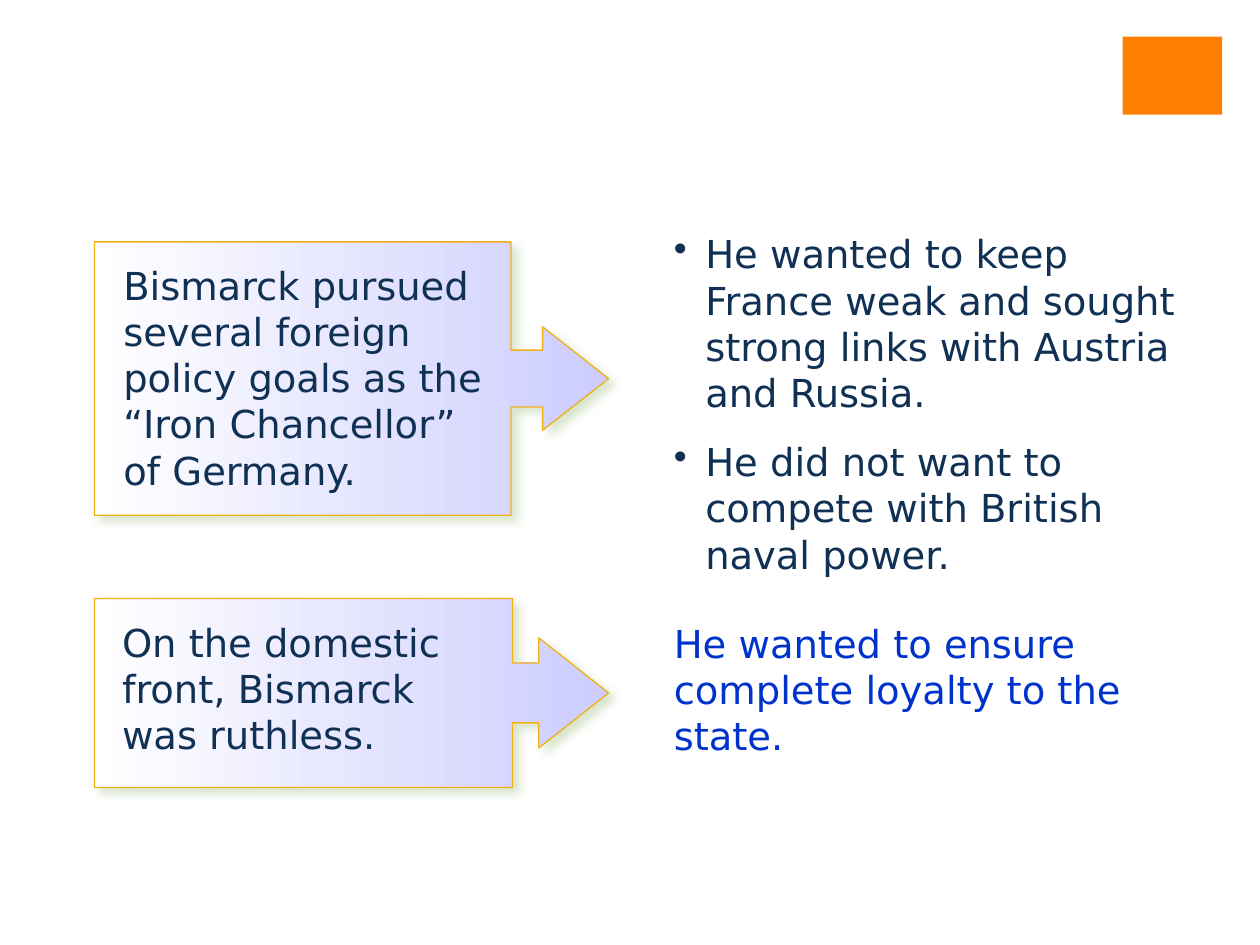
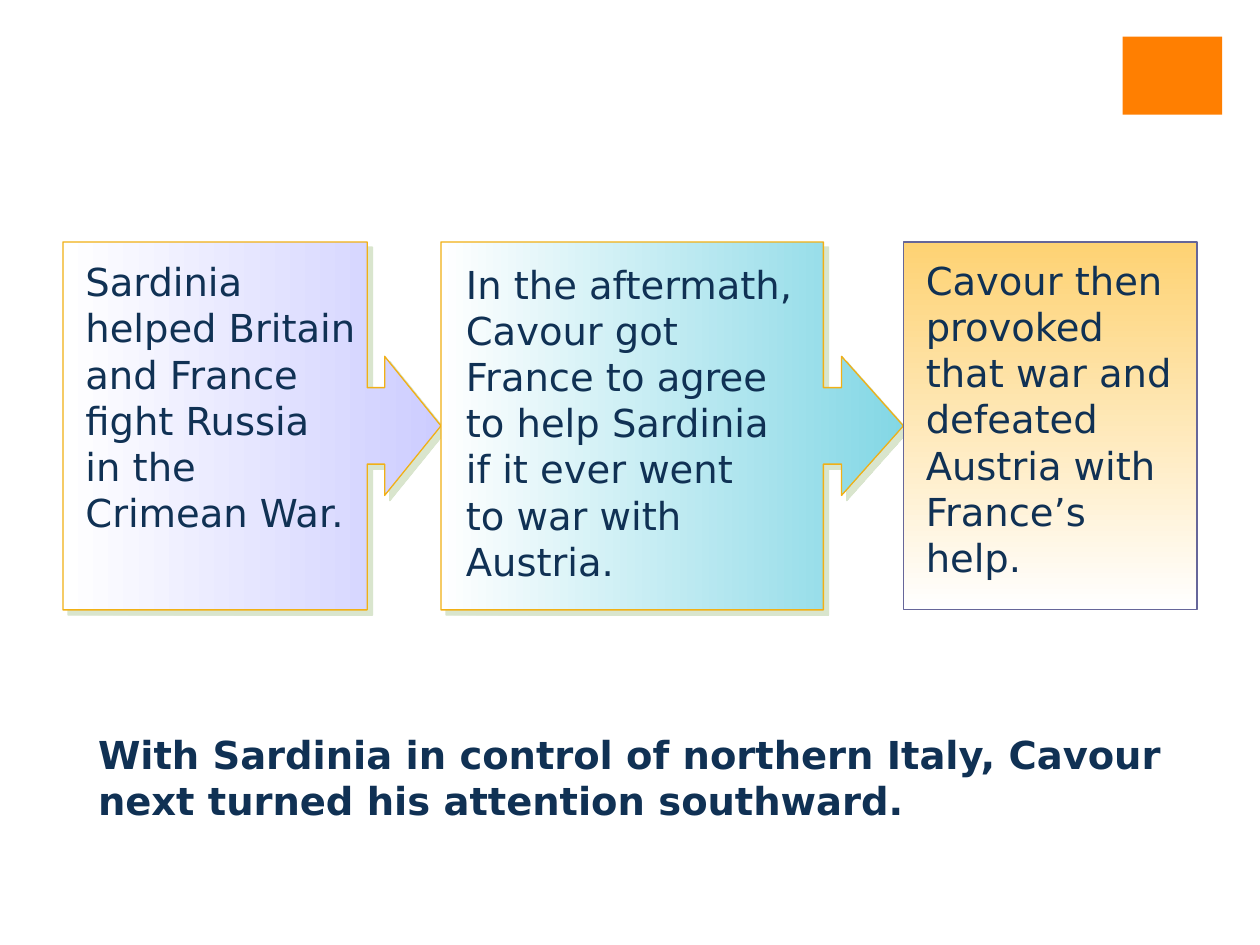
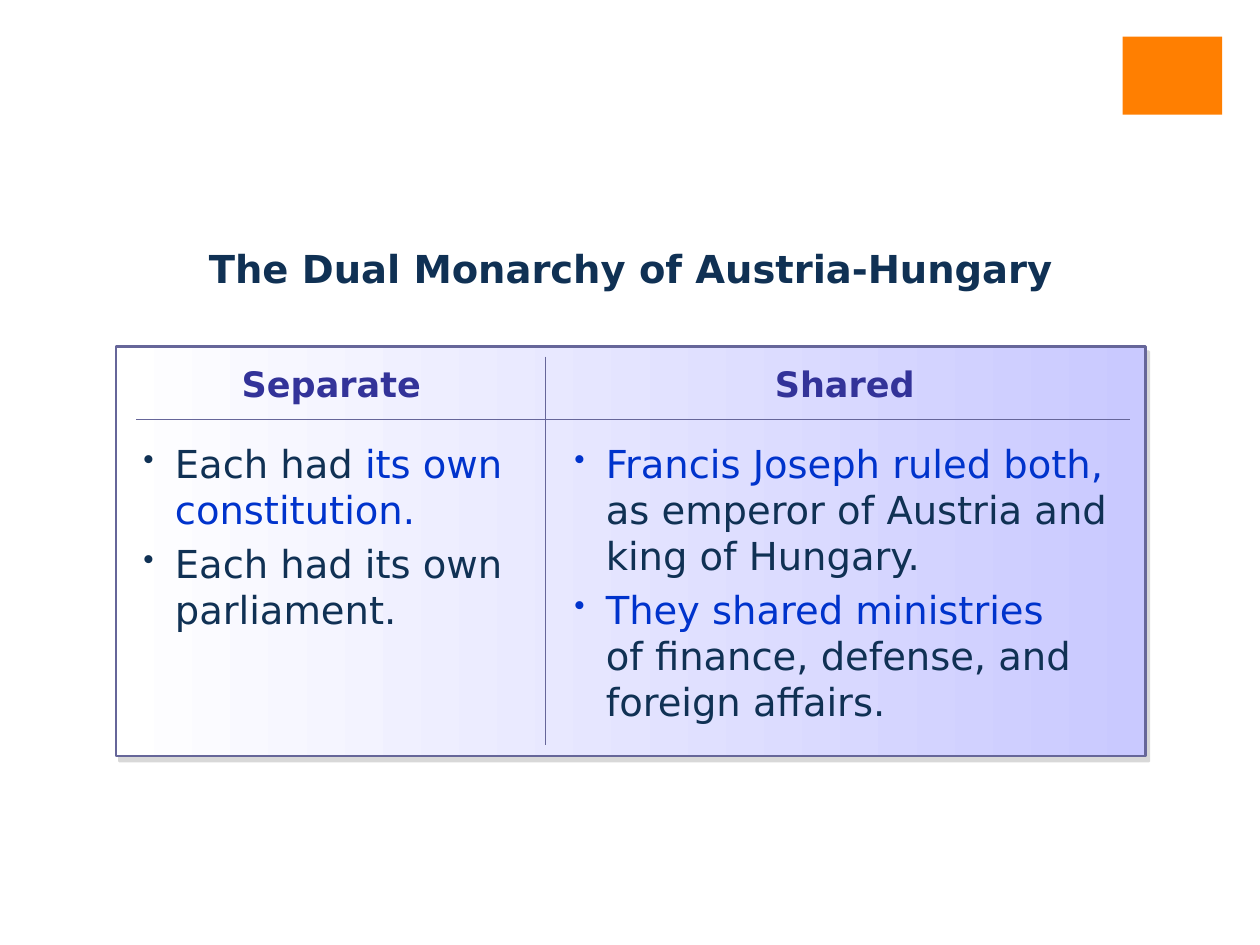
from dataclasses import dataclass

from lxml import etree
from pptx import Presentation
from pptx.dml.color import RGBColor
from pptx.enum.shapes import MSO_SHAPE
from pptx.enum.text import PP_ALIGN
from pptx.oxml.ns import qn
from pptx.util import Emu, Pt

RECT = MSO_SHAPE.RECTANGLE
ARROW_BOX = MSO_SHAPE.RIGHT_ARROW_CALLOUT
LEFT, CENTER = PP_ALIGN.LEFT, PP_ALIGN.CENTER

EMU_PER_PX = 9144
FONT = "DejaVu Sans"
PLAIN_TABLE = "{2D5ABB26-0587-4C30-8999-92F81FD0307C}"
COLORS = {
    "white": "FFFFFF",
    "orange": "FF7F01",
    "navy": "103154",
    "blue": "0033CC",
    "indigo": "333399",
    "slate": "666699",
    "gold": "F1B015",
    "lavender": "CDCDFF",
    "lilac": "C9C9FF",
    "aqua": "83D7E5",
    "amber": "FED273",
    "moss": "ADC793",
    "gray": "B2B2B2",
}


@dataclass(frozen=True)
class Box:
    x: int
    y: int
    w: int
    h: int

    def emu(self) -> tuple:
        return tuple(px(v) for v in (self.x, self.y, self.w, self.h))


@dataclass(frozen=True)
class Shadow:
    color: str
    alpha: int
    blur: float
    dist: float
    angle: int


@dataclass(frozen=True)
class Callout:
    box: Box
    adjustments: tuple
    color: str
    shadow: Shadow
    text_box: Box
    text: str


@dataclass(frozen=True)
class Column:
    head_box: Box
    head: str
    list_box: Box
    items: list


SOFT = Shadow("moss", 46, 5, 4.2, 45)
HARD = Shadow("moss", 46, 0, 4.2, 45)
PANEL = Shadow("gray", 50, 0, 3.6, 56)

POLICY_CALLOUTS = [
    Callout(Box(75, 192, 408, 217), (0.208, 0.189, 0.241, 0.81), "lavender", SOFT,
            Box(88, 203, 362, 196),
            "Bismarck pursued several foreign \npolicy goals as the “Iron Chancellor” \nof Germany."),
    Callout(Box(75, 475, 408, 150), (0.317, 0.291, 0.369, 0.813), "lavender", SOFT,
            Box(87, 486, 342, 122),
            "On the domestic \nfront, Bismarck \nwas ruthless."),
]
CAVOUR_CALLOUTS = [
    Callout(Box(50, 192, 300, 292), (0.208, 0.189, 0.153, 0.805), "lavender", HARD,
            Box(58, 200, 242, 230),
            "Sardinia helped Britain and France fight Russia \nin the Crimean War."),
    Callout(Box(350, 192, 367, 292), (0.208, 0.189, 0.168, 0.827), "aqua", HARD,
            Box(360, 202, 307, 266),
            "In the aftermath, Cavour got \nFrance to agree \nto help Sardinia \n"
            "if it ever went \nto war with Austria."),
]
MONARCHY_COLUMNS = [
    Column(Box(92, 283, 342, 43), "Separate", Box(104, 344, 392, 164), [
        [("Each had ", "navy"), ("its own constitution.", "blue")],
        "Each had its own parliament.",
    ]),
    Column(Box(433, 283, 475, 43), "Shared", Box(446, 344, 458, 237), [
        [("Francis Joseph ruled both,", "blue"),
         (" as emperor of Austria and king of Hungary.", "navy")],
        [("They shared ministries \n", "blue"),
         ("of finance, defense, and foreign affairs.", "navy")],
    ]),
]


def px(value: int) -> Emu:
    return Emu(value * EMU_PER_PX)


def rgb(name: str) -> RGBColor:
    return RGBColor.from_string(COLORS[name])


def sub(parent, tag: str, **attrs):
    return etree.SubElement(parent, qn(tag), {k: str(v) for k, v in attrs.items()})


def add_bullet(p, scale: int) -> None:
    pPr = p._p.get_or_add_pPr()
    pPr.set("marL", str(px(25)))
    pPr.set("indent", str(px(-25)))
    sub(pPr, "a:buSzPct", val=scale * 1000)
    sub(pPr, "a:buChar", char="•")


def write(tf, paragraphs, *, size=22, color="navy", bold=False, align=LEFT,
          bullet=0, after=0.0) -> None:
    tf.word_wrap = True
    if isinstance(paragraphs, str):
        paragraphs = [paragraphs]
    for i, runs in enumerate(paragraphs):
        p = tf.paragraphs[0] if i == 0 else tf.add_paragraph()
        p.alignment = align
        p.space_after = Pt(after)
        if bullet:
            add_bullet(p, bullet)
        for text, run_color in [(runs, color)] if isinstance(runs, str) else runs:
            for n, line in enumerate(text.split("\n")):
                if n:
                    p.add_line_break()
                if line:
                    r = p.add_run()
                    r.text = line
                    r.font.name = FONT
                    r.font.size = Pt(size)
                    r.font.bold = bold
                    r.font.color.rgb = rgb(run_color)


def add_text(s, box: Box, paragraphs, **fmt) -> None:
    write(s.shapes.add_textbox(*box.emu()).text_frame, paragraphs, **fmt)


def add_shadow(sp, shadow: Shadow) -> None:
    effects = sp._element.spPr.find(qn("a:effectLst"))
    outer = sub(effects, "a:outerShdw", blurRad=Pt(shadow.blur), dist=Pt(shadow.dist),
                dir=shadow.angle * 60000, algn="ctr", rotWithShape=0)
    color = sub(outer, "a:srgbClr", val=COLORS[shadow.color])
    sub(color, "a:alpha", val=shadow.alpha * 1000)


def add_block(s, box: Box, fill: tuple, *, kind=RECT, angle=0, line=None,
              width=0.75, shadow=None):
    sp = s.shapes.add_shape(kind, *box.emu())
    if len(fill) == 1:
        sp.fill.solid()
        sp.fill.fore_color.rgb = rgb(fill[0])
    else:
        sp.fill.gradient()
        sp.fill.gradient_angle = angle
        for stop, name in zip(sp.fill.gradient_stops, fill):
            stop.color.rgb = rgb(name)
    if line:
        sp.line.color.rgb = rgb(line)
        sp.line.width = Pt(width)
    else:
        sp.line.fill.background()
    sp.shadow.inherit = False
    if shadow:
        add_shadow(sp, shadow)
    return sp


def add_callout(s, callout: Callout) -> None:
    sp = add_block(s, callout.box, ("white", callout.color), kind=ARROW_BOX,
                   line="gold", shadow=callout.shadow)
    for i, value in enumerate(callout.adjustments):
        sp.adjustments[i] = value
    add_text(s, callout.text_box, callout.text)


def add_plain_table(s, box: Box, widths: list, heights: list):
    table = s.shapes.add_table(len(heights), len(widths), *box.emu()).table
    table.first_row = table.horz_banding = False
    table._tbl.tblPr.find(qn("a:tableStyleId")).text = PLAIN_TABLE
    for column, width in zip(table.columns, widths):
        column.width = px(width)
    for row, height in zip(table.rows, heights):
        row.height = px(height)
    for cell in table.iter_cells():
        cell.fill.background()
    return table


def add_inner_borders(table, color: str, width: float) -> None:
    last_row, last_col = len(table.rows) - 1, len(table.columns) - 1
    for i in range(last_row + 1):
        for j in range(last_col + 1):
            tcPr = table.cell(i, j)._tc.get_or_add_tcPr()
            sides = [("a:lnL", j > 0), ("a:lnR", j < last_col),
                     ("a:lnT", i > 0), ("a:lnB", i < last_row)]
            for n, (tag, _) in enumerate(side for side in sides if side[1]):
                ln = sub(tcPr, tag, w=Pt(width))
                sub(sub(ln, "a:solidFill"), "a:srgbClr", val=COLORS[color])
                tcPr.insert(n, ln)


def new_slide(prs):
    s = prs.slides.add_slide(prs.slide_layouts[6])
    add_block(s, Box(891, 29, 79, 62), ("orange",))
    return s


def build_bismarck(prs) -> None:
    s = new_slide(prs)
    for callout in POLICY_CALLOUTS:
        add_callout(s, callout)
    add_text(s, Box(525, 178, 433, 315), [
        "He wanted to keep France weak and sought strong links with Austria and Russia.",
        "He did not want to compete with British naval power.",
    ], bullet=100, after=13.2)
    add_text(s, Box(525, 487, 450, 122),
             "He wanted to ensure complete loyalty to the state.", color="blue")


def build_cavour(prs) -> None:
    s = new_slide(prs)
    for callout in CAVOUR_CALLOUTS:
        add_callout(s, callout)
    add_block(s, Box(717, 192, 233, 292), ("amber", "white"), angle=270, line="slate")
    add_text(s, Box(725, 199, 217, 266),
             "Cavour then provoked that war and defeated Austria with France’s help.")
    add_text(s, Box(68, 575, 866, 83),
             "With Sardinia in control of northern Italy, Cavour next turned "
             "his attention southward.", bold=True)


def build_dual_monarchy(prs) -> None:
    s = new_slide(prs)
    add_block(s, Box(92, 275, 817, 325), ("white", "lilac"), line="slate", width=1.5,
              shadow=PANEL)
    title = add_plain_table(s, Box(92, 192, 817, 58), [817], [58])
    write(title.cell(0, 0).text_frame, "The Dual Monarchy of Austria-Hungary",
          bold=True, align=CENTER)
    grid = add_plain_table(s, Box(108, 283, 789, 308), [325, 464], [50, 258])
    add_inner_borders(grid, "slate", 1)
    for column in MONARCHY_COLUMNS:
        add_text(s, column.head_box, column.head, size=20, color="indigo", bold=True,
                 align=CENTER)
        add_text(s, column.list_box, column.items, bullet=80, after=4.4)


def main() -> None:
    prs = Presentation()
    prs.slide_width, prs.slide_height = px(1000), px(750)
    build_bismarck(prs)
    build_cavour(prs)
    build_dual_monarchy(prs)
    prs.save("out.pptx")


if __name__ == "__main__":
    main()
